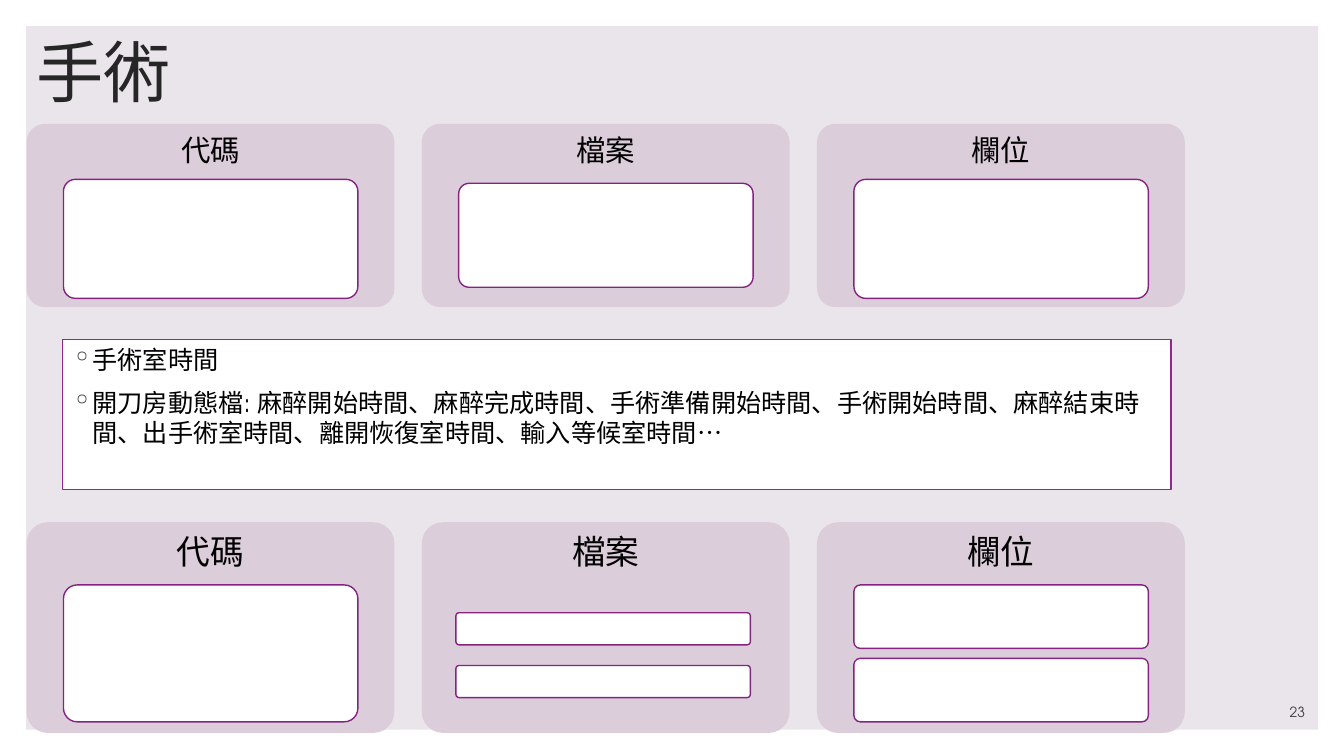
from dataclasses import dataclass

from lxml.etree import SubElement
from pptx import Presentation
from pptx.dml.color import RGBColor
from pptx.enum.shapes import MSO_SHAPE
from pptx.enum.text import MSO_ANCHOR, PP_ALIGN
from pptx.oxml.ns import qn
from pptx.shapes.autoshape import Shape
from pptx.slide import Slide
from pptx.text.text import TextFrame
from pptx.util import Cm, Pt


@dataclass(frozen=True)
class Theme:
    font: str = "TeX Gyre Adventor"
    backdrop: str = "EAE5EB"
    panel: str = "DCCDDB"
    white: str = "FFFFFF"
    box_line: str = "852382"
    timing_line: str = "92278F"
    title_text: str = "262626"
    text: str = "000000"
    number_text: str = "404040"
    title_size: int = 48
    timing_size: int = 18
    number_size: int = 10


@dataclass(frozen=True)
class Area:
    """Position and size in centimetres."""
    left: float
    top: float
    width: float
    height: float

    def lengths(self) -> tuple[Cm, Cm, Cm, Cm]:
        return Cm(self.left), Cm(self.top), Cm(self.width), Cm(self.height)


@dataclass(frozen=True)
class BoxStack:
    """Equal white boxes in one panel, measured from the panel's top left."""
    top: float
    height: float
    count: int = 1
    pitch: float = 0
    indent: float = 0.93


@dataclass(frozen=True)
class PanelRow:
    top: float
    height: float
    heading_height: float
    heading_size: int
    inset: float
    stacks: tuple[BoxStack, ...]


THEME = Theme()
HEADINGS = ("代碼", "檔案", "欄位")
COLUMN_LEFT, COLUMN_PITCH = 0.67, 9.96
PANEL_WIDTH, BOX_WIDTH = 9.27, 7.42

PANEL_ROWS = (
    PanelRow(3.12, 4.62, 1.4, 21, 0.23,
             (BoxStack(1.4, 3), BoxStack(1.5, 2.62), BoxStack(1.4, 3))),
    PanelRow(13.16, 5.31, 1.6, 24, 0.25,
             (BoxStack(1.58, 3.45),
              BoxStack(2.28, 0.81, 2, 1.33, 0.86),
              BoxStack(1.58, 1.6, 2, 1.85))),
)

TIMING_ITEMS = (
    "手術室時間",
    "開刀房動態檔: 麻醉開始時間、麻醉完成時間、手術準備開始時間、手術開始時間、"
    "麻醉結束時間、出手術室時間、離開恢復室時間、輸入等候室時間…",
)


def add_block(slide: Slide, area: Area, fill: str, line: str | None = None,
              rounded: bool = False) -> Shape:
    kind = MSO_SHAPE.ROUNDED_RECTANGLE if rounded else MSO_SHAPE.RECTANGLE
    shape = slide.shapes.add_shape(kind, *area.lengths())
    if rounded:
        shape.adjustments[0] = 0.1
    shape.shadow.inherit = False
    shape.fill.solid()
    shape.fill.fore_color.rgb = RGBColor.from_string(fill)
    if line:
        shape.line.color.rgb = RGBColor.from_string(line)
        shape.line.width = Pt(1)
    else:
        shape.line.fill.background()
    return shape


def format_text(text_frame: TextFrame, size: int, color: str,
                align: PP_ALIGN = PP_ALIGN.LEFT) -> None:
    for paragraph in text_frame.paragraphs:
        paragraph.alignment = align
        for run in paragraph.runs:
            run.font.name = THEME.font
            run.font.size = Pt(size)
            run.font.color.rgb = RGBColor.from_string(color)


def add_label(slide: Slide, area: Area, text: str, size: int, color: str,
              align: PP_ALIGN = PP_ALIGN.LEFT,
              anchor: MSO_ANCHOR = MSO_ANCHOR.MIDDLE) -> TextFrame:
    text_frame = slide.shapes.add_textbox(*area.lengths()).text_frame
    text_frame.word_wrap = True
    text_frame.vertical_anchor = anchor
    text_frame.text = text
    text_frame.paragraphs[0].line_spacing = 0.9
    format_text(text_frame, size, color, align)
    return text_frame


def add_timing_list(slide: Slide) -> None:
    shape = add_block(slide, Area(1.57, 8.56, 27.94, 3.78),
                      THEME.white, THEME.timing_line)
    text_frame = shape.text_frame
    text_frame.word_wrap = True
    text_frame.vertical_anchor = MSO_ANCHOR.TOP
    text_frame.text = "\n".join(TIMING_ITEMS)
    format_text(text_frame, THEME.timing_size, THEME.text)
    for paragraph in text_frame.paragraphs:
        paragraph.space_before = Pt(9)
        # Hanging bullet
        properties = paragraph._p.get_or_add_pPr()
        properties.set("marL", str(Cm(0.51)))
        properties.set("indent", str(-Cm(0.51)))
        bullet_color = SubElement(properties, qn("a:buClr"))
        SubElement(bullet_color, qn("a:srgbClr"), val=THEME.title_text)
        SubElement(properties, qn("a:buChar"), char="◦")


def add_panel(slide: Slide, row: PanelRow, left: float, heading: str,
              stack: BoxStack) -> None:
    add_block(slide, Area(left, row.top, PANEL_WIDTH, row.height),
              THEME.panel, rounded=True)
    text_frame = add_label(
        slide, Area(left, row.top, PANEL_WIDTH, row.heading_height),
        heading, row.heading_size, THEME.text, PP_ALIGN.CENTER)
    text_frame.margin_left = text_frame.margin_right = Cm(row.inset)
    text_frame.margin_top = text_frame.margin_bottom = Cm(row.inset)
    for index in range(stack.count):
        top = row.top + stack.top + index * stack.pitch
        add_block(slide, Area(left + stack.indent, top, BOX_WIDTH, stack.height),
                  THEME.white, THEME.box_line, rounded=True)


def main() -> None:
    presentation = Presentation()
    presentation.slide_width = Cm(33.87)
    presentation.slide_height = Cm(19.05)
    slide = presentation.slides.add_slide(presentation.slide_layouts[6])

    # Backdrop, title and timing list
    add_block(slide, Area(0.66, 0.66, 32.56, 17.73), THEME.backdrop)
    add_label(slide, Area(0.66, 0, 27.94, 3.81), "手術",
              THEME.title_size, THEME.title_text)
    add_timing_list(slide)

    # Two rows of panels
    for row in PANEL_ROWS:
        for column, (heading, stack) in enumerate(zip(HEADINGS, row.stacks)):
            add_panel(slide, row, COLUMN_LEFT + column * COLUMN_PITCH,
                      heading, stack)

    # Slide number
    add_label(slide, Area(29.08, 17.53, 4.06, 0.76), "23", THEME.number_size,
              THEME.number_text, PP_ALIGN.RIGHT, MSO_ANCHOR.BOTTOM)

    presentation.save("out.pptx")


if __name__ == "__main__":
    main()
